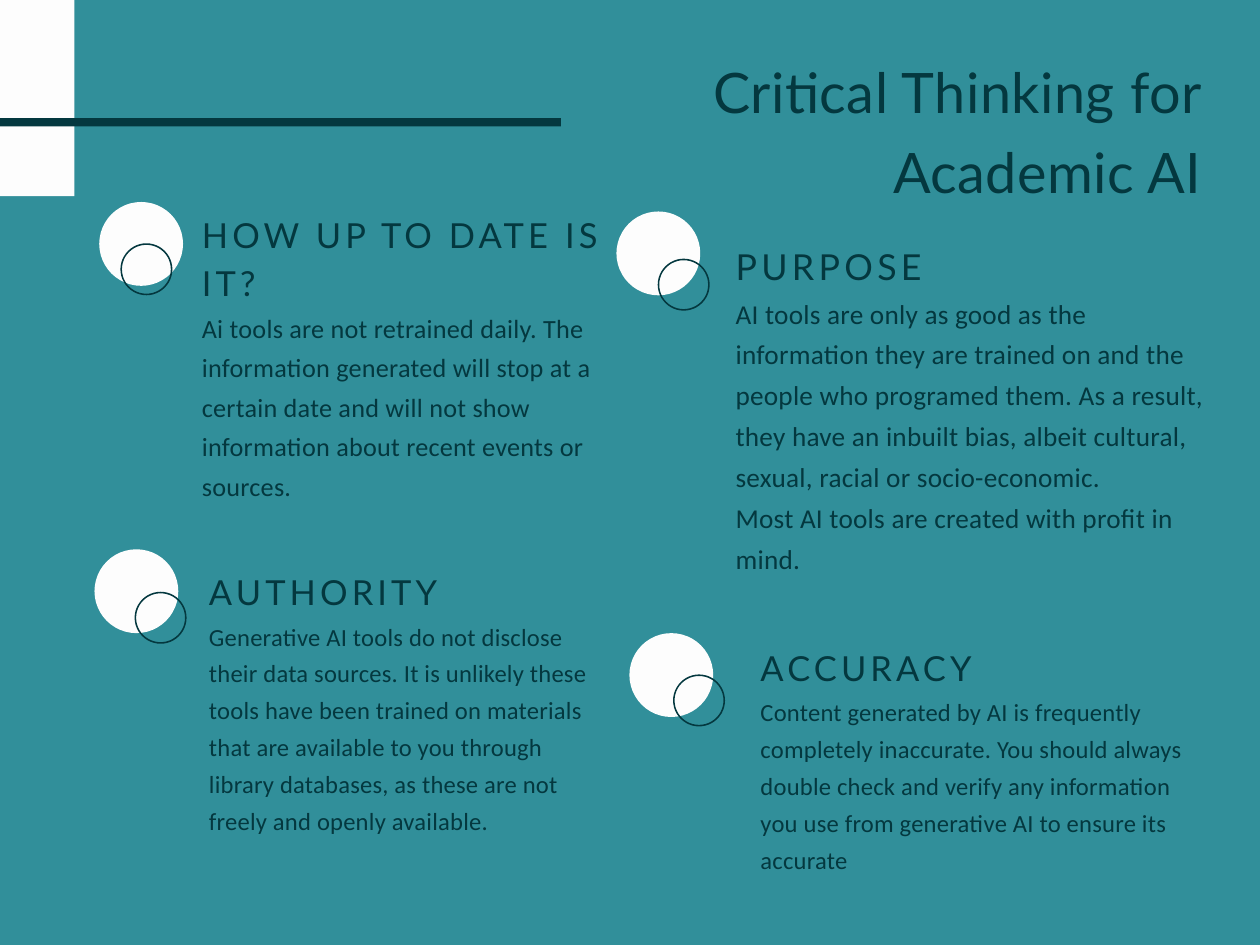
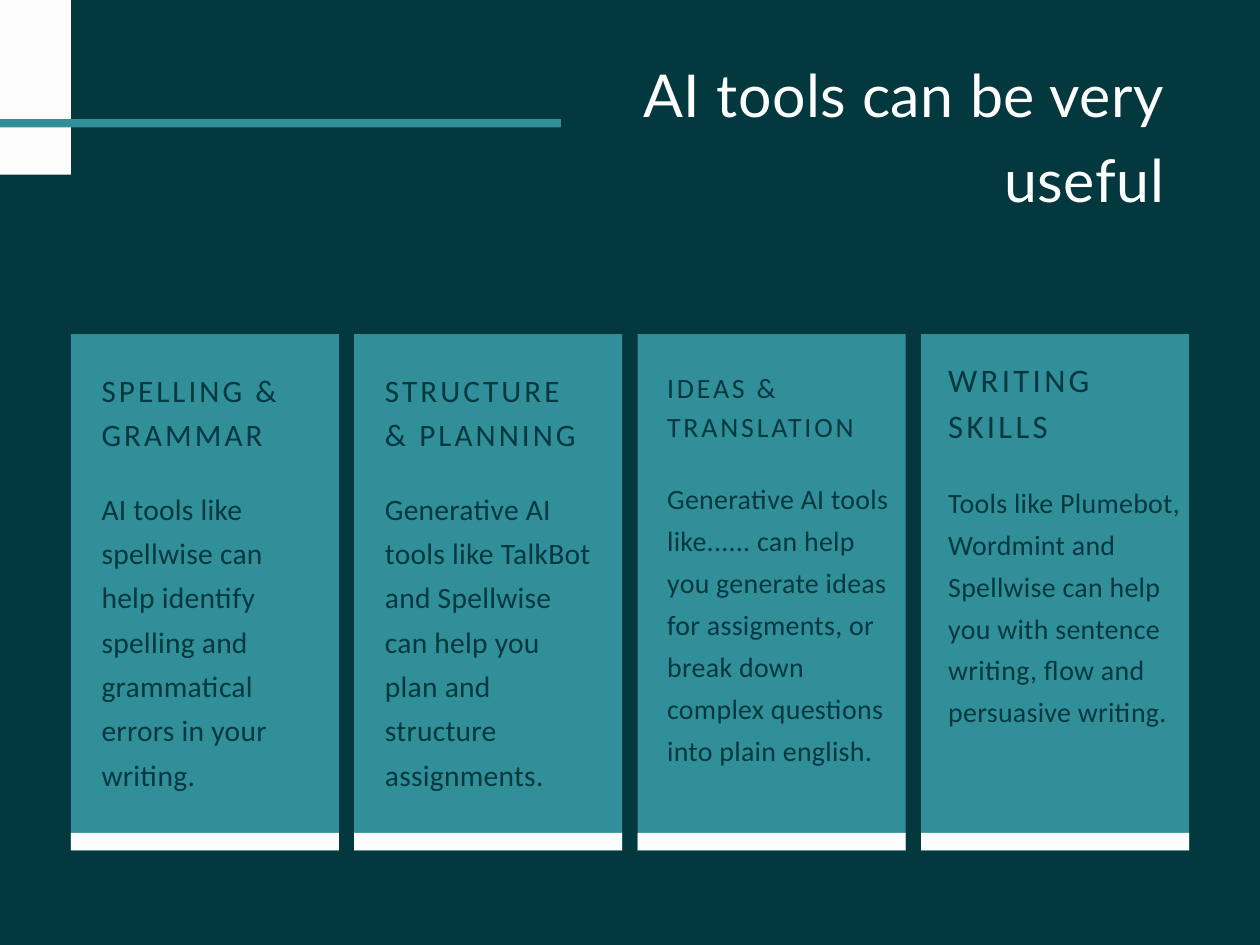
"""Build two teal slides on critical thinking with AI tools."""
from pptx import Presentation
from pptx.dml.color import RGBColor
from pptx.enum.shapes import MSO_SHAPE
from pptx.enum.text import MSO_ANCHOR, MSO_AUTO_SIZE, PP_ALIGN
from pptx.util import Inches, Pt

TEAL = RGBColor(0x31, 0x8F, 0x9A)
DARK = RGBColor(0x04, 0x38, 0x3F)
WHITE = RGBColor(0xFD, 0xFD, 0xFD)
HEAD_FONT, BODY_FONT = "Lato", "Calibri"
TITLE_LEADING, HEAD_LEADING, BODY_LEADING = 1.43, 1.4, 1.5
BODY_TRACKING = 0.01
DISC, RING = 0.71, 0.44
CARD_LEFT, CARD_TOP, CARD_W, CARD_H, CARD_PITCH = 0.6, 2.83, 2.27, 4.37, 2.4
CARD_BAR = 0.15

# text box, heading size, body size, disc corner, ring corner, heading lines, heading, paragraphs
TOPICS = [
    ((1.77, 4.78, 3.26, 2.27), 21, 15, (0.8, 4.65), (1.14, 5.01), 1, "AUTHORITY",
     "Generative AI tools do not disclose their data sources. It is unlikely these tools "
     "have been trained on materials that are available to you through library databases, "
     "as these are not freely and openly available."),
    ((1.71, 1.75, 3.39, 2.47), 21, 16, (0.84, 1.71), (1.02, 2.06), 2, "HOW UP TO DATE IS IT?",
     "Ai tools are not retrained daily. The information generated will stop at a certain "
     "date and will not show information about recent events or sources."),
    ((6.44, 5.42, 3.72, 1.96), 21, 15, (5.33, 5.36), (5.7, 5.71), 1, "ACCURACY",
     "Content generated by AI is frequently completely inaccurate. You should always double "
     "check and verify any information you use from generative AI to ensure its accurate"),
    ((6.23, 2.01, 4.14, 3.18), 21.8, 16.6, (5.22, 1.79), (5.57, 2.19), 1, "PURPOSE",
     "AI tools are only as good as the information they are trained on and the people who "
     "programed them. As a result, they have an inbuilt bias, albeit cultural, sexual, "
     "racial or socio-economic.\nMost AI tools are created with profit in mind."),
]

# inset, text width, heading offset, body offset, heading size, body size, heading, body
CARDS = [
    (0.26, 1.75, 0.26, 1.25, 19, 18, "SPELLING & GRAMMAR",
     "AI tools like spellwise can help identify spelling and grammatical errors in your "
     "writing."),
    (0.26, 1.75, 0.26, 1.25, 19, 18, "STRUCTURE & PLANNING",
     "Generative AI tools like TalkBot and Spellwise can help you plan and structure "
     "assignments."),
    (0.25, 1.94, 0.26, 1.18, 17, 17, "IDEAS & TRANSLATION",
     "Generative AI tools like...... can help you generate ideas for assigments, or break "
     "down complex questions into plain english."),
    (0.23, 2.04, 0.16, 1.21, 20, 17, "WRITING SKILLS",
     "Tools like Plumebot, Wordmint and Spellwise can help you with sentence writing, flow "
     "and persuasive writing."),
]


def write(sp, text, font, size, color, leading, tracking, align=PP_ALIGN.LEFT):
    """Fill a shape with text set to an exact leading and letter spacing."""
    tf = sp.text_frame
    tf.text = text
    tf.word_wrap = True
    tf.auto_size = MSO_AUTO_SIZE.NONE
    tf.vertical_anchor = MSO_ANCHOR.TOP
    tf.margin_left = tf.margin_top = tf.margin_right = tf.margin_bottom = 0
    for p in tf.paragraphs:
        p.alignment = align
        p.line_spacing = Pt(round(size * leading, 1))
        for r in p.runs:
            r.font.name = font
            r.font.size = Pt(size)
            r.font.color.rgb = color
            r._r.get_or_add_rPr().set("spc", str(round(size * tracking * 100)))


def add_text(s, box, *style):
    """Add a text box at a box given in inches."""
    write(s.shapes.add_textbox(*map(Inches, box)), *style)


def add_solid(s, kind, box, color):
    """Add a preset shape with a plain fill and no outline."""
    sp = s.shapes.add_shape(kind, *map(Inches, box))
    sp.shadow.inherit = False
    sp.fill.solid()
    sp.fill.fore_color.rgb = color
    sp.line.fill.background()
    return sp


def add_slide(prs, background, title, box, size, color):
    """Add a coloured slide with a right-aligned title."""
    s = prs.slides.add_slide(prs.slide_layouts[5])
    s.background.fill.solid()
    s.background.fill.fore_color.rgb = background
    sp = s.shapes.title
    sp.left, sp.top, sp.width, sp.height = map(Inches, box)
    write(sp, title, HEAD_FONT, size, color, TITLE_LEADING, 0.01, PP_ALIGN.RIGHT)
    return s


def add_corner(s, block, rule_top, rule_color):
    """Add the white corner block and the rule that crosses it."""
    add_solid(s, MSO_SHAPE.RECTANGLE, block, WHITE)
    add_solid(s, MSO_SHAPE.RECTANGLE, (-1.59, rule_top, 6.34, 0.07), rule_color)


def add_topic(s, box, head_size, body_size, disc, ring, lines, head, body):
    """Add a heading over its text, with a disc and a ring beside them."""
    x, y, w, h = box
    head_h = lines * head_size * HEAD_LEADING / 72 + 0.01
    add_text(s, (x, y, w, head_h), head, HEAD_FONT, head_size, DARK, HEAD_LEADING, 0.12)
    add_text(s, (x, y + head_h, w, h - head_h), body, BODY_FONT, body_size, DARK,
             BODY_LEADING, BODY_TRACKING)
    add_solid(s, MSO_SHAPE.OVAL, (*disc, DISC, DISC), WHITE)
    add_solid(s, MSO_SHAPE.DONUT, (*ring, RING, RING), DARK).adjustments[0] = 0.03


def add_card(s, box, inset, text_w, head_dy, body_dy, head_size, body_size, head, body):
    """Add a card with a heading, a text and a white bar along its foot."""
    x, y, w, h = box
    add_solid(s, MSO_SHAPE.RECTANGLE, box, TEAL)
    add_solid(s, MSO_SHAPE.RECTANGLE, (x, y + h - CARD_BAR, w, CARD_BAR), WHITE)
    head_h = 2 * head_size * HEAD_LEADING / 72
    add_text(s, (x + inset, y + head_dy, text_w, head_h), head, BODY_FONT, head_size, DARK,
             HEAD_LEADING, 0.1)
    add_text(s, (x + inset, y + body_dy, text_w, 2.6), body, BODY_FONT, body_size, DARK,
             BODY_LEADING, BODY_TRACKING)


def build_thinking(prs):
    """Build the slide with four questions to ask."""
    s = add_slide(prs, TEAL, "Critical Thinking for Academic AI", (4.17, 0.38, 6.01, 1.31),
                  34, DARK)
    for topic in TOPICS:
        add_topic(s, *topic)
    add_corner(s, (-0.12, -0.11, 0.75, 1.77), 1, DARK)


def build_uses(prs):
    """Build the slide with four cards in a row."""
    s = add_slide(prs, DARK, "AI tools can be very useful", (4.95, 0.38, 4.91, 1.39),
                  36, WHITE)
    add_corner(s, (-0.16, -0.15, 0.76, 1.63), 1.01, TEAL)
    for i, card in enumerate(CARDS):
        add_card(s, (CARD_LEFT + i * CARD_PITCH, CARD_TOP, CARD_W, CARD_H), *card)


def main():
    """Build and save the presentation."""
    prs = Presentation()
    prs.slide_width, prs.slide_height = Inches(10.67), Inches(8)
    build_thinking(prs)
    build_uses(prs)
    prs.save("out.pptx")


if __name__ == "__main__":
    main()
